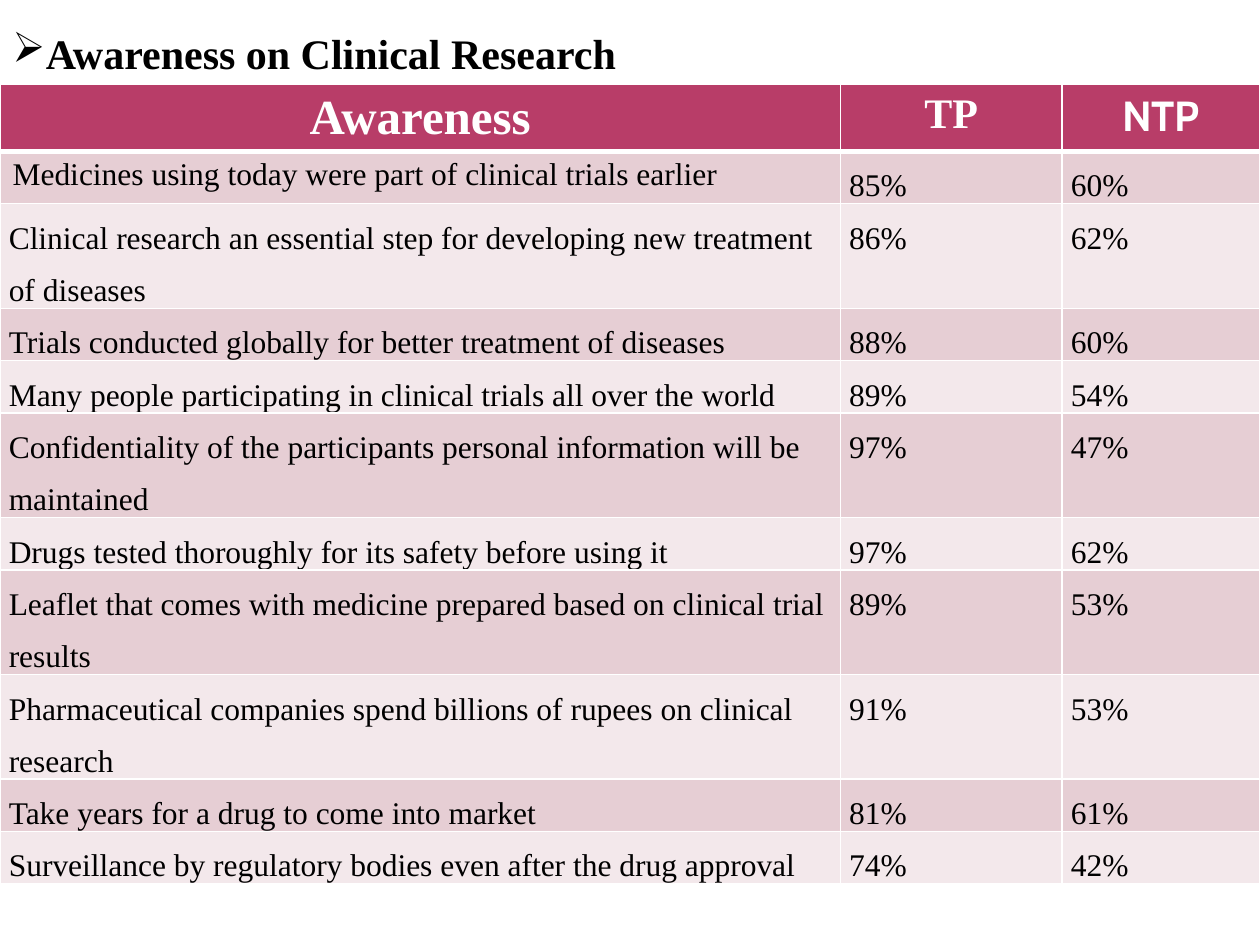
from dataclasses import dataclass

from lxml.etree import SubElement
from pptx import Presentation
from pptx.dml.color import RGBColor as Rgb
from pptx.enum.text import MSO_AUTO_SIZE as AutoSize, PP_ALIGN as Align
from pptx.oxml.ns import qn
from pptx.util import Inches, Pt


@dataclass(frozen=True)
class Theme:
    header: str = "B83D68"
    bands: tuple = ("E6CED4", "F3E8EB")
    white: str = "FFFFFF"
    black: str = "000000"
    serif: str = "Times New Roman"
    sans: str = "Cabin"
    title_size: int = 24
    body_size: int = 18
    thin: int = 1
    thick: int = 3


THEME = Theme()
COLUMN_WIDTHS = (6.67, 1.76, 1.57)
HEADER_HEIGHT, LINE_HEIGHT = 0.52, 0.41
HEADINGS = (
    ("Awareness", 28, THEME.serif),
    ("TP", 24, THEME.serif),
    ("NTP", 24, THEME.sans),
)
# statement, TP, NTP, number of text lines
FINDINGS = (
    ("Medicines using today were part of clinical trials earlier", 85, 60, 1),
    ("Clinical research an essential step for developing new treatment of diseases", 86, 62, 2),
    ("Trials conducted globally for better treatment of diseases", 88, 60, 1),
    ("Many people participating in clinical trials all over the world", 89, 54, 1),
    ("Confidentiality of the participants personal information will be maintained", 97, 47, 2),
    ("Drugs tested thoroughly for its safety before using it", 97, 62, 1),
    ("Leaflet that comes with medicine prepared based on clinical trial results", 89, 53, 2),
    ("Pharmaceutical companies spend billions of rupees on clinical research", 91, 53, 2),
    ("Take years for a drug to come into market", 81, 61, 1),
    ("Surveillance by regulatory bodies even after the drug approval", 74, 42, 1),
)


def write_text(paragraph, text, size, color, bold=False, font=THEME.serif):
    run = paragraph.add_run()
    run.text = text
    for name, value in {"size": Pt(size), "bold": bold, "name": font}.items():
        setattr(run.font, name, value)
    run.font.color.rgb = Rgb.from_string(color)


def style_cell(cell, fill, top=THEME.thin, bottom=THEME.thin):
    """Draw the white borders, which must precede the fill in the XML, then fill."""
    properties = cell._tc.get_or_add_tcPr()
    widths = {"a:lnL": THEME.thin, "a:lnR": THEME.thin, "a:lnT": top, "a:lnB": bottom}
    for tag, width in widths.items():
        line = SubElement(properties, qn(tag), w=str(Pt(width)))
        SubElement(SubElement(line, qn("a:solidFill")), qn("a:srgbClr"), val=THEME.white)
    cell.fill.solid()
    cell.fill.fore_color.rgb = Rgb.from_string(fill)


def tighten(cell):
    """Use narrow margins and one-and-a-half line spacing."""
    margins = {"margin_left": 0.07, "margin_top": 0, "margin_right": 0.07, "margin_bottom": 0}
    for name, value in margins.items():
        setattr(cell, name, Inches(value))
    cell.text_frame.paragraphs[0].line_spacing = 1.5


def add_title(slide, text):
    box = slide.shapes.add_textbox(Inches(0), Inches(0.17), Inches(6.75), Inches(0.5))
    box.text_frame.word_wrap = True
    box.text_frame.auto_size = AutoSize.SHAPE_TO_FIT_TEXT
    paragraph = box.text_frame.paragraphs[0]
    SubElement(paragraph._p.get_or_add_pPr(), qn("a:buChar"), char="➢")
    write_text(paragraph, text, THEME.title_size, THEME.black, bold=True)


def add_awareness_table(slide):
    heights = [HEADER_HEIGHT] + [LINE_HEIGHT * lines for *_, lines in FINDINGS]
    table = slide.shapes.add_table(
        len(heights), len(COLUMN_WIDTHS), Inches(0), Inches(0.67),
        Inches(sum(COLUMN_WIDTHS)), Inches(sum(heights)),
    ).table
    for column, width in zip(table.columns, COLUMN_WIDTHS):
        column.width = Inches(width)
    for row, height in zip(table.rows, heights):
        row.height = Inches(height)

    for column, (heading, size, font) in enumerate(HEADINGS):
        cell = table.cell(0, column)
        style_cell(cell, THEME.header, bottom=THEME.thick)
        paragraph = cell.text_frame.paragraphs[0]
        paragraph.alignment = Align.CENTER
        write_text(paragraph, heading, size, THEME.white, bold=True, font=font)

    for row, (statement, tp, ntp, _) in enumerate(FINDINGS, start=1):
        for column, text in enumerate((statement, f"{tp}%", f"{ntp}%")):
            cell = table.cell(row, column)
            style_cell(cell, THEME.bands[(row - 1) % 2],
                       top=THEME.thick if row == 1 else THEME.thin)
            if (row, column) != (1, 0):  # the first statement keeps default spacing
                tighten(cell)
            write_text(cell.text_frame.paragraphs[0], text, THEME.body_size, THEME.black)


def main():
    presentation = Presentation()
    presentation.slide_width, presentation.slide_height = Inches(10), Inches(7.5)
    slide = presentation.slides.add_slide(presentation.slide_layouts[6])
    add_awareness_table(slide)
    add_title(slide, "Awareness on Clinical Research")
    presentation.save("out.pptx")


if __name__ == "__main__":
    main()
